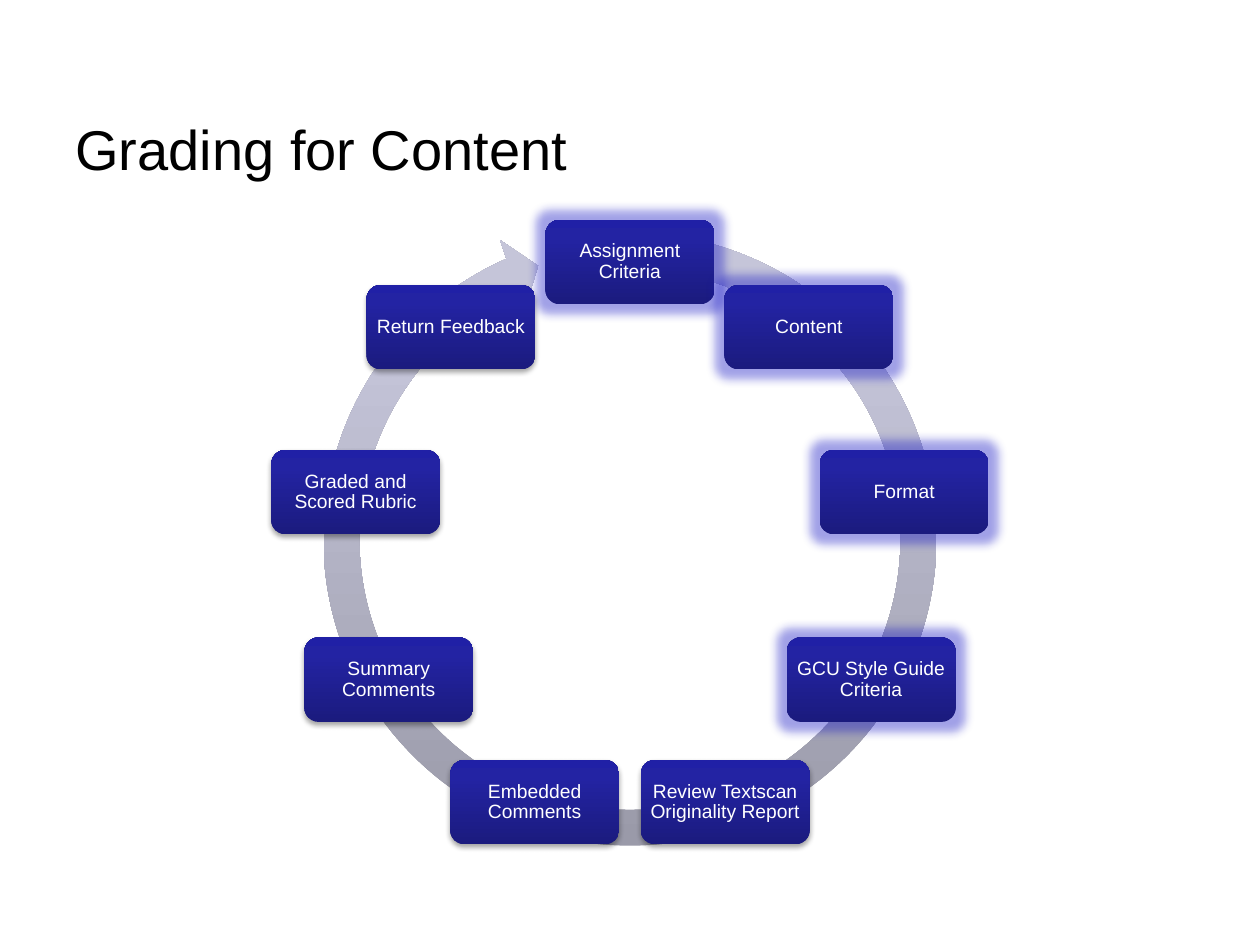
from math import cos, radians, sin

from lxml.etree import SubElement as Sub
from pptx import Presentation
from pptx.dml.color import RGBColor as Rgb
from pptx.enum.shapes import MSO_SHAPE as Kind
from pptx.enum.text import MSO_ANCHOR as Anchor, PP_ALIGN as Align
from pptx.oxml.ns import qn
from pptx.util import Inches, Pt

TITLE = "Grading for Content"
STEPS = [
    ("Assignment Criteria", True),
    ("Content", True),
    ("Format", True),
    ("GCU Style Guide Criteria", True),
    ("Review Textscan Originality Report", False),
    ("Embedded Comments", False),
    ("Summary Comments", False),
    ("Graded and Scored Rubric", False),
    ("Return Feedback", False),
]
COLORS = {"title": "000000", "text": "FFFFFF", "glow": "1414C4", "shadow": "000000"}
RING = [(0, "9898A7"), (80, "C5C5D9"), (100, "C6C6DA")]
CARD = [(0, "1B1B7E"), (80, "2323A3"), (100, "2020A6")]
BEND = (0.055, 3.31, 147.54, 168.15, 0.058)
MID_X, MID_Y, RADIUS = 5, 4.29, 2.21
SIZE, WIDE, HIGH = 5.18, 1.34, 0.67


def tint(node, color, alpha=None):
    item = Sub(node, qn("a:srgbClr"), val=color)
    if alpha:
        Sub(item, qn("a:alpha"), val=str(alpha * 1000))


def draw(slide, kind, x, y, w, h, stops):
    shape = slide.shapes.add_shape(kind, Inches(x), Inches(y), Inches(w), Inches(h))
    shape.shadow.inherit = False
    shape.line.fill.background()
    shape.fill.gradient()
    shape.fill.gradient_angle = 90
    ramp = shape._element.spPr.find(qn("a:gradFill")).find(qn("a:gsLst"))
    for stop in list(ramp):
        ramp.remove(stop)
    for pos, color in stops:
        tint(Sub(ramp, qn("a:gs"), pos=str(pos * 1000)), color)
    return shape


def shine(shape, glow):
    box = shape._element.spPr.find(qn("a:effectLst"))
    if glow:
        tint(Sub(box, qn("a:glow"), rad=str(Pt(11))), COLORS["glow"], 40)
    else:
        drop = Sub(box, qn("a:outerShdw"), blurRad=str(Pt(3.1)),
                   dist=str(Pt(1.8)), dir="5400000", rotWithShape="0")
        tint(drop, COLORS["shadow"], 35)


def write(para, text, size, color):
    run = para.add_run()
    run.text = text
    run.font.name = "Arial"
    run.font.size = Pt(size)
    run.font.color.rgb = Rgb.from_string(color)


def main():
    deck = Presentation()
    deck.slide_width, deck.slide_height = Inches(10), Inches(7.5)
    slide = deck.slides.add_slide(deck.slide_layouts[6])

    head = slide.shapes.add_textbox(Inches(0.5), Inches(0.3), Inches(9), Inches(1.25))
    frame = head.text_frame
    frame.word_wrap = True
    frame.vertical_anchor = Anchor.BOTTOM
    frame.margin_bottom = Inches(0.11)
    write(frame.paragraphs[0], TITLE, 32, COLORS["title"])

    ring = draw(slide, Kind.CIRCULAR_ARROW, MID_X - SIZE / 2, MID_Y - 0.01 - SIZE / 2,
                SIZE, SIZE, RING)
    for i, value in enumerate(BEND):
        ring.adjustments[i] = value

    for i, (text, glow) in enumerate(STEPS):
        turn = radians(360 / len(STEPS) * i)
        x = MID_X + RADIUS * sin(turn) - WIDE / 2
        y = MID_Y - RADIUS * cos(turn) - HIGH / 2
        card = draw(slide, Kind.ROUNDED_RECTANGLE, x, y, WIDE, HIGH, CARD)
        shine(card, glow)
        frame = card.text_frame
        frame.word_wrap = True
        frame.vertical_anchor = Anchor.MIDDLE
        frame.margin_left = frame.margin_right = Inches(0.04)
        frame.margin_top = frame.margin_bottom = Inches(0.04)
        para = frame.paragraphs[0]
        para.alignment = Align.CENTER
        para.line_spacing = 0.9
        write(para, text, 11, COLORS["text"])

    deck.save("out.pptx")


if __name__ == "__main__":
    main()
